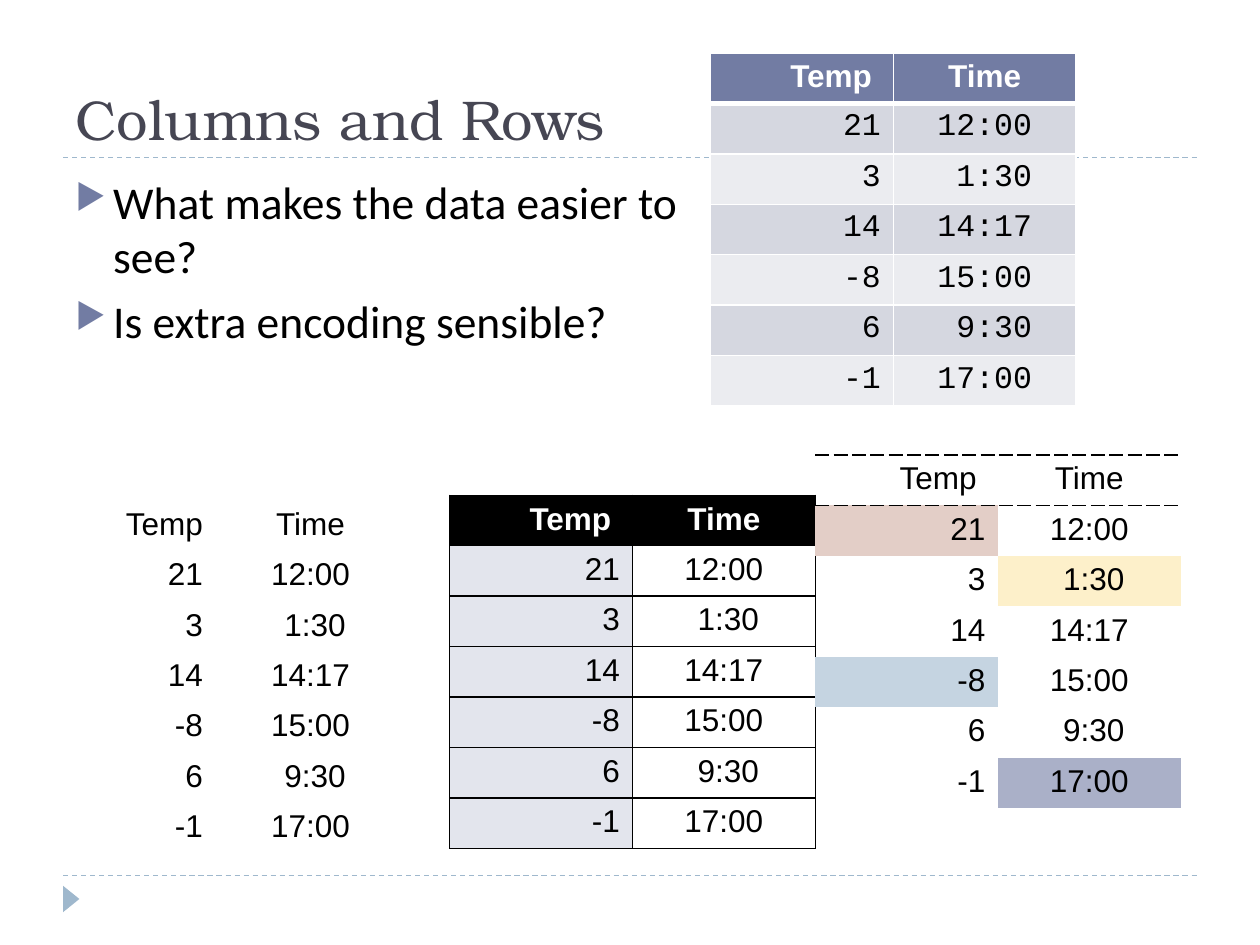
import dataclasses
import pptx
import pptx.dml.color
import pptx.enum.dml
import pptx.enum.shapes
import pptx.enum.text
import pptx.oxml.ns
import pptx.util
from lxml import etree

Inches = pptx.util.Inches
Pt = pptx.util.Pt
Align = pptx.enum.text.PP_ALIGN
Shape = pptx.enum.shapes.MSO_SHAPE
tag = pptx.oxml.ns.qn


@dataclasses.dataclass(frozen=True)
class Theme:
    black: str = "000000"
    white: str = "FFFFFF"
    title: str = "464653"
    rule: str = "9FB8CD"
    head: str = "727CA3"
    dark: str = "D5D7E0"
    light: str = "EBECF0"
    tint: str = "E3E5ED"
    red: str = "E3CEC7"
    gold: str = "FDF0CA"
    blue: str = "C5D4E1"
    mauve: str = "AAB0C8"
    title_font: str = "TeX Gyre Bonum"
    body_font: str = "Calibri"
    plain_font: str = "Arial"
    code_font: str = "Courier New"
    title_size: int = 32
    body_size: int = 26
    cell_size: int = 18


@dataclasses.dataclass
class Look:
    color: str
    font: str
    bold: bool = False
    fill: str = ""
    alpha: int = 100
    edges: dict = dataclasses.field(default_factory=dict)


class Deck:
    def __init__(self, theme):
        self.theme = theme
        self.show = pptx.Presentation()
        self.show.slide_width, self.show.slide_height = Inches(10), Inches(7.5)
        self.slide = self.show.slides.add_slide(self.show.slide_layouts[6])

    def paint(self, target, color):
        target.solid()
        target.fore_color.rgb = pptx.dml.color.RGBColor.from_string(color)

    def style(self, font, name, size, color, bold=False):
        font.name, font.size, font.bold = name, Pt(size), bold
        font.color.rgb = pptx.dml.color.RGBColor.from_string(color)

    def rule(self, top):
        line = self.slide.shapes.add_connector(
            pptx.enum.shapes.MSO_CONNECTOR.STRAIGHT,
            Inches(0.5), Inches(top), Inches(9.5), Inches(top))
        self.paint(line.line.fill, self.theme.rule)
        line.line.width = Pt(0.75)
        line.line.dash_style = pptx.enum.dml.MSO_LINE.DASH
        etree.SubElement(line._element.spPr, tag("a:effectLst"))

    def arrow(self, *box):
        mark = self.slide.shapes.add_shape(Shape.ISOSCELES_TRIANGLE, *map(Inches, box))
        mark.rotation = 90
        mark.shadow.inherit = False
        self.paint(mark.fill, self.theme.rule)
        mark.line.fill.background()

    def frame(self, *box):
        frame = self.slide.shapes.add_textbox(*map(Inches, box)).text_frame
        frame.word_wrap = True
        return frame

    def title(self, text, *box):
        theme = self.theme
        frame = self.frame(*box)
        frame.vertical_anchor = pptx.enum.text.MSO_ANCHOR.BOTTOM
        frame.text = text
        self.style(frame.paragraphs[0].font, theme.title_font, theme.title_size, theme.title)

    def points(self, texts, *box):
        theme = self.theme
        frame = self.frame(*box)
        frame.text = "\n".join(texts)
        for para in frame.paragraphs:
            para.space_before = Pt(6)
            self.style(para.font, theme.body_font, theme.body_size, theme.black)
            props = para._p.get_or_add_pPr()
            props.set("marL", str(Inches(0.3)))
            props.set("indent", str(-Inches(0.3)))
            hue = etree.Element(tag("a:buClr"))
            etree.SubElement(hue, tag("a:srgbClr"), val=theme.head)
            size = etree.Element(tag("a:buSzPct"), val="76000")
            sign = etree.Element(tag("a:buChar"), char="▶")
            spot = props.index(props.find(tag("a:defRPr")))
            props[spot:spot] = [hue, size, sign]

    def edge(self, cell, side, pen):
        color, width, dash = pen or (None, 0, None)
        line = etree.SubElement(cell._tc.get_or_add_tcPr(), tag("a:ln" + side), w=str(Pt(width)))
        if not pen:
            etree.SubElement(line, tag("a:noFill"))
            return
        fill = etree.SubElement(line, tag("a:solidFill"))
        etree.SubElement(fill, tag("a:srgbClr"), val=color)
        etree.SubElement(line, tag("a:prstDash"), val=dash)

    def cell(self, cell, text, align, look):
        cell.text = text
        para = cell.text_frame.paragraphs[0]
        para.alignment = align
        self.style(para.font, look.font, self.theme.cell_size, look.color, look.bold)
        for side in "LRTB":
            self.edge(cell, side, look.edges.get(side))
        if not look.fill:
            cell.fill.background()
            return
        self.paint(cell.fill, look.fill)
        if look.alpha < 100:
            hue = cell._tc.tcPr.find(".//" + tag("a:srgbClr"))
            etree.SubElement(hue, tag("a:alpha"), val=str(look.alpha * 1000))

    def table(self, rows, left, top, width, look):
        table = self.slide.shapes.add_table(
            len(rows), 2, Inches(left), Inches(top),
            Inches(width), Inches(0.4 * len(rows))).table
        table.first_row = table.horz_banding = False
        for r, row in enumerate(rows):
            for c, text in enumerate(row):
                align = Align.CENTER if c else Align.RIGHT
                self.cell(table.cell(r, c), text, align, look(r, c))


THEME = Theme()
DATA = [("21", "12:00"), ("3", " 1:30"), ("14", "14:17"),
        ("-8", "15:00"), ("6", " 9:30"), ("-1", "17:00")]
ROWS = [("Temp ", "Time")] + DATA
LAST = len(DATA)
MARKS = {(1, 0): THEME.red, (2, 1): THEME.gold, (4, 0): THEME.blue, (6, 1): THEME.mauve}


def banded(row, col):
    thin, thick = ((THEME.white, width, "solid") for width in (1, 3))
    edges = {"L": thin, "R": thin, "T": thick if row == 1 else thin,
             "B": thin if row else thick}
    if row == 0:
        return Look(THEME.white, THEME.plain_font, True, THEME.head, edges=edges)
    fill = THEME.dark if row % 2 else THEME.light
    return Look(THEME.black, THEME.code_font, fill=fill, edges=edges)


def plain(row, col):
    return Look(THEME.black, THEME.plain_font)


def boxed(row, col):
    rim, rule = ((THEME.black, width, "solid") for width in (0.75, 1))
    edges = {"L": rule if col else rim, "R": rim if col else rule,
             "T": rule if row else rim, "B": rim if row == LAST else rule}
    if row == 0:
        return Look(THEME.white, THEME.plain_font, True, THEME.black, edges=edges)
    fill = "" if col else THEME.tint
    return Look(THEME.black, THEME.plain_font, fill=fill, alpha=85, edges=edges)


def marked(row, col):
    dash = (THEME.black, 1, "sysDash")
    edges = {0: {"T": dash, "B": dash}, 1: {"T": dash}}.get(row, {})
    return Look(THEME.black, THEME.plain_font, fill=MARKS.get((row, col), ""), edges=edges)


def main():
    deck = Deck(THEME)
    deck.rule(6.95)
    deck.rule(1.25)
    deck.arrow(0.46, 7.07, 0.21, 0.13)
    deck.title("Columns and Rows", 0.5, 0.17, 9, 1.08)
    deck.points(["What makes the data easier to see?", "Is extra encoding sensible?"],
                0.5, 1.33, 4.99, 5.4)
    deck.table(ROWS, 5.64, 0.42, 2.9, banded)
    deck.table([("Temp", "Time")] + DATA + [("", "")], 0.2, 3.97, 3.02, plain)
    deck.table(ROWS, 3.57, 3.93, 2.9, boxed)
    deck.table(ROWS, 6.47, 3.61, 2.9, marked)
    deck.show.save("out.pptx")


if __name__ == "__main__":
    main()
